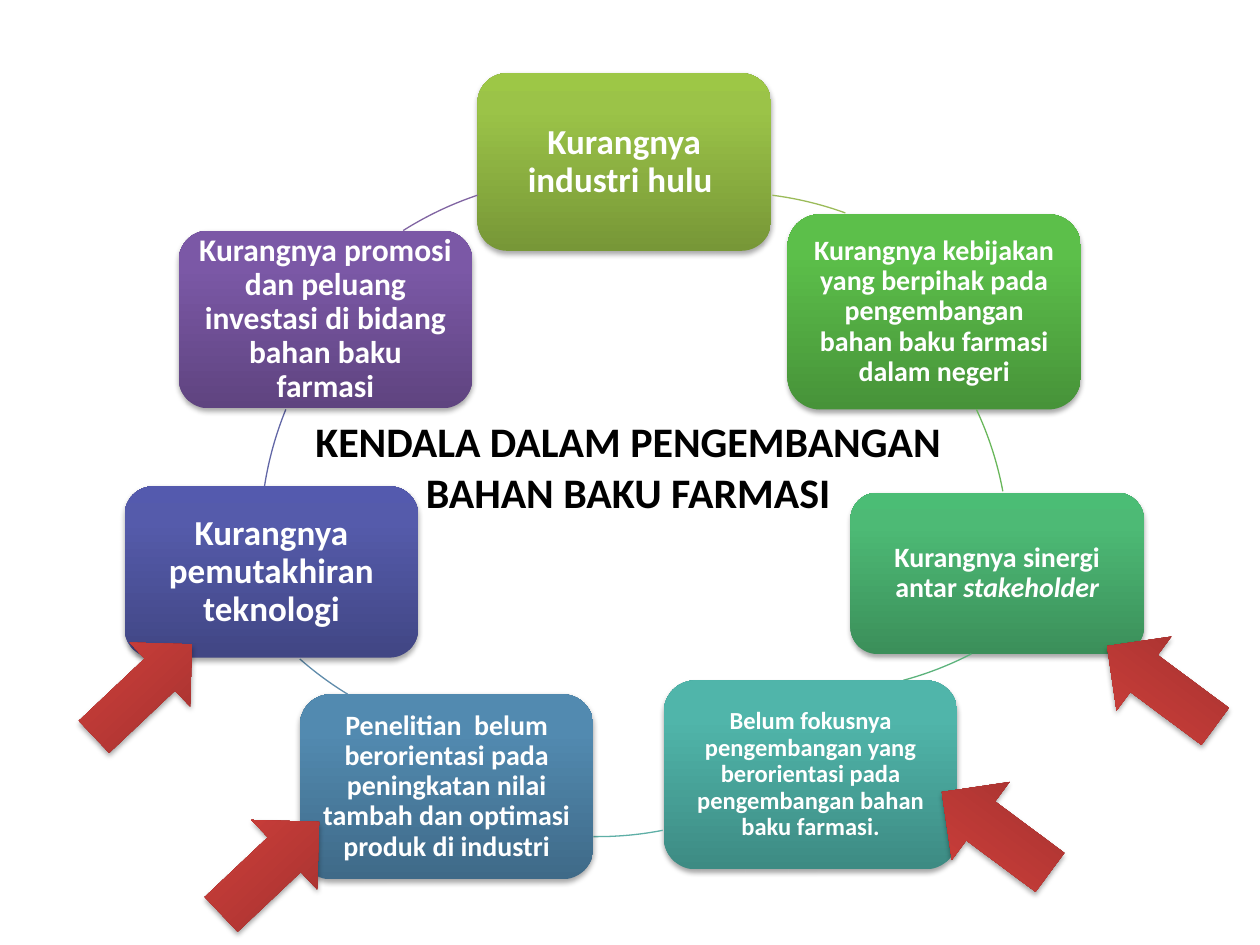
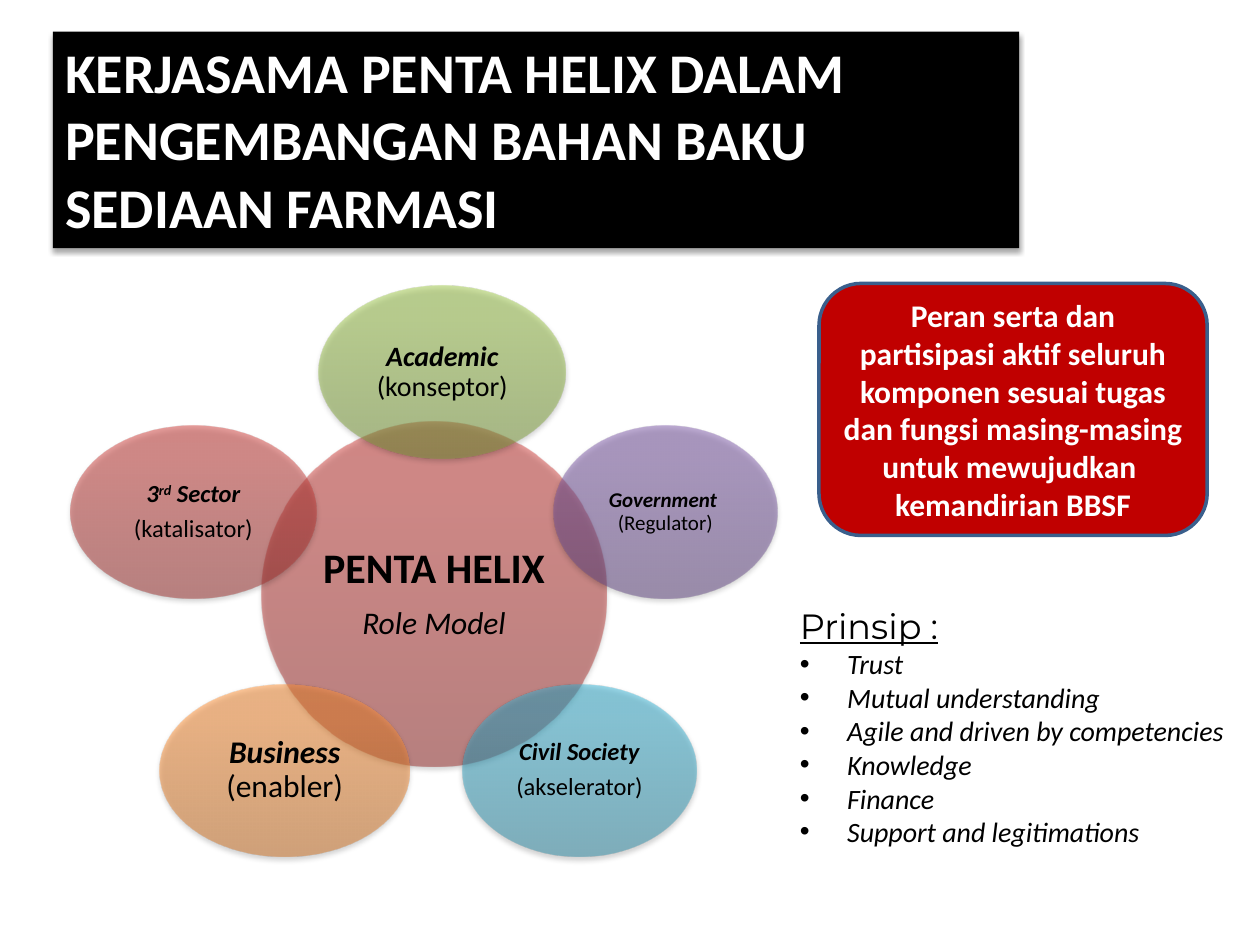
from math import atan2, degrees, hypot, sqrt

from pptx import Presentation
from pptx.dml.color import RGBColor
from pptx.enum.shapes import MSO_SHAPE
from pptx.enum.text import MSO_ANCHOR, PP_ALIGN
from pptx.oxml import parse_xml
from pptx.oxml.ns import nsdecls, qn
from pptx.util import Pt

WHITE, BLACK = "FFFFFF", "000000"
GREEN = ("779737", "9BC348", "9DC746")
LEAF = ("479339", "5CBF4A", "5BC249")
EMERALD = ("3B8F5A", "4DBA75", "4BBD75")
TEAL = ("3D8B83", "50B5AA", "4EB8AC")
STEEL = ("3F6A88", "528AB0", "518BB3")
INDIGO = ("414684", "555BAB", "545AAE")
PURPLE = ("5F4480", "7B58A6", "7C57A8")
RED = ("9C2F2D", "CB3E3A", "CE3B37")
AQUA = ("2A88A2", "37B1D2", "34B4D6")
ORANGE = ("CC6E20", "FF9034", "FF9136")

CARD_WIDTH = 167.7
RING_RADIUS = 194.4
PETAL_HEIGHT = 98.6
ARROW_LENGTH = 77

CARDS = [
    (272.9, 41.8, 101.5, GREEN, 20, "Kurangnya industri hulu "),
    (450, 122.4, 111.6, LEAF, 16,
     "Kurangnya kebijakan yang berpihak pada pengembangan bahan baku farmasi dalam negeri"),
    (486, 281.5, 92.2, EMERALD, 16,
     [("Kurangnya sinergi antar ", {}), ("stakeholder", {"italic": True})]),
    (379.4, 388.8, 108, TEAL, 14,
     "Belum fokusnya pengembangan yang berorientasi pada pengembangan bahan baku farmasi."),
    (171.4, 396.7, 105.8, STEEL, 16,
     "Penelitian  belum berorientasi pada peningkatan nilai tambah dan optimasi produk di industri"),
    (71.3, 277.9, 97.9, INDIGO, 20, "Kurangnya pemutakhiran teknologi"),
    (102.2, 131.8, 101.5, PURPLE, 18,
     "Kurangnya promosi dan peluang investasi di bidang bahan baku farmasi"),
]
ARCS = [
    ((441.4, 111.6), (483.1, 121.7), "9BBB59"),
    ((558, 234), (573.1, 280.8), "69B75B"),
    ((555.1, 373.7), (516.2, 388.8), "5CB37C"),
    ((378.7, 474.5), (339.1, 478.1), "5EAFA6"),
    ((198.7, 396.7), (171.4, 376.6), "608CAB"),
    ((151.2, 277.9), (163.4, 234), "6267A6"),
    ((230.4, 131.8), (272.9, 111.6), "8064A2"),
]
ARROWS = [
    (43.2, 369.4, 50.4, 316.6),
    (115.9, 468.7, 54.7, 316.6),
    (530.6, 447.8, 55.4, 216.6),
    (625, 365.8, 52.6, 216.6),
]
PLAIN = {"bold": False, "italic": False}
PETALS = [
    (182.2, 163.4, 141.1, GREEN, 16, [[("Academic ", {}), ("(konseptor)", PLAIN)]]),
    (316.1, 243.4, 128.2, PURPLE, 12, [[("Government  ", {}), ("(Regulator)", PLAIN)]]),
    (264.2, 391, 133.9, AQUA, 14, ["Civil Society", [("(akselerator)", PLAIN)]]),
    (91.4, 391, 142.6, ORANGE, 18, [[("Business ", {}), ("(enabler)", PLAIN)]]),
    (40.3, 243.4, 140.4, RED, 14,
     [[("3", {}), ("rd", {"raised": True}), (" Sector", {})], [("(katalisator)", PLAIN)]]),
]
PRINCIPLES = ["Trust", "Mutual understanding", "Agile and driven by competencies",
              "Knowledge", "Finance", "Support and legitimations"]


def rgb(value):
    """Turn a hex string into a colour."""
    return RGBColor.from_string(value)


def format_span(span, size=18, color=BLACK, font="Calibri", bold=False, italic=False,
                underline=False, raised=False):
    """Apply character format to one run."""
    style = span.font
    style.size, style.name = Pt(size), font
    style.bold, style.italic, style.underline = bold, italic, underline
    style.color.rgb = rgb(color)
    if raised:
        span._r.get_or_add_rPr().set("baseline", "30000")


def add_bullet(para, indent=27):
    """Give a paragraph a hanging round bullet."""
    properties = para._p.get_or_add_pPr()
    properties.set("marL", str(Pt(indent)))
    properties.set("indent", str(-Pt(indent)))
    properties.append(parse_xml(f'<a:buFont {nsdecls("a")} typeface="Arial"/>'))
    properties.append(parse_xml(f'<a:buChar {nsdecls("a")} char="•"/>'))


def write(shape, paragraphs, align=PP_ALIGN.CENTER, anchor=MSO_ANCHOR.MIDDLE, margin=None,
          wrap=True, spacing=None, after=0, bullets_from=None, **style):
    """Fill a shape with paragraphs, each a string or a list of (text, format) spans."""
    frame = shape.text_frame
    frame.word_wrap, frame.vertical_anchor = wrap, anchor
    if margin is not None:
        frame.margin_left = frame.margin_right = Pt(margin)
        frame.margin_top = frame.margin_bottom = Pt(margin)
    for index, content in enumerate(paragraphs):
        para = frame.add_paragraph() if index else frame.paragraphs[0]
        para.alignment, para.space_after = align, Pt(after)
        if spacing:
            para.line_spacing = spacing
        if bullets_from is not None and index >= bullets_from:
            add_bullet(para)
        for text, changes in [(content, {})] if isinstance(content, str) else content:
            span = para.add_run()
            span.text = text
            format_span(span, **{**style, **changes})


class Painter:
    """Draw styled elements on the current slide."""

    def __init__(self, deck):
        """Keep the deck that receives the slides."""
        self.deck = deck
        self.page = None

    def new_page(self):
        """Start a blank slide."""
        self.page = self.deck.slides.add_slide(self.deck.slide_layouts[6])

    def shape(self, kind, left, top, width, height, fill=None, line=None, weight=0.75):
        """Add a preset shape with a plain fill and line."""
        shape = self.page.shapes.add_shape(kind, Pt(left), Pt(top), Pt(width), Pt(height))
        shape.shadow.inherit = False
        if fill:
            shape.fill.solid()
            shape.fill.fore_color.rgb = rgb(fill)
        else:
            shape.fill.background()
        if line:
            shape.line.color.rgb = rgb(line)
            shape.line.width = Pt(weight)
        else:
            shape.line.fill.background()
        return shape

    def shadow(self, shape):
        """Drop a soft shadow below a shape."""
        shape._element.spPr.find(qn("a:effectLst")).append(parse_xml(
            f'<a:outerShdw {nsdecls("a")} blurRad="{Pt(3.1)}" dist="{Pt(1.8)}" dir="5400000" '
            'rotWithShape="0"><a:srgbClr val="000000"><a:alpha val="35000"/></a:srgbClr>'
            '</a:outerShdw>'))

    def glossy(self, kind, left, top, width, height, shades, opacity=100):
        """Add a shaded shape that is darkest at the bottom."""
        shape = self.shape(kind, left, top, width, height)
        stops = "".join(
            f'<a:gs pos="{place}000"><a:srgbClr val="{shade}"><a:alpha val="{opacity}000"/>'
            '</a:srgbClr></a:gs>' for place, shade in zip((0, 80, 100), shades))
        properties = shape._element.spPr
        properties.replace(properties.find(qn("a:noFill")), parse_xml(
            f'<a:gradFill {nsdecls("a")} rotWithShape="1"><a:gsLst>{stops}</a:gsLst>'
            '<a:lin ang="16200000" scaled="0"/></a:gradFill>'))
        self.shadow(shape)
        return shape

    def arc(self, start, end, color):
        """Draw a clockwise piece of the ring between two points."""
        (x1, y1), (x2, y2) = start, end
        chord = hypot(x2 - x1, y2 - y1)
        reach = sqrt(RING_RADIUS ** 2 - chord ** 2 / 4) / chord
        center_x = (x1 + x2) / 2 - (y2 - y1) * reach
        center_y = (y1 + y2) / 2 + (x2 - x1) * reach
        arc = self.shape(MSO_SHAPE.ARC, center_x - RING_RADIUS, center_y - RING_RADIUS,
                         2 * RING_RADIUS, 2 * RING_RADIUS, line=color)
        for index, (x, y) in enumerate((start, end)):
            arc.adjustments[index] = degrees(atan2(y - center_y, x - center_x)) % 360 * 0.6

    def text(self, left, top, width, height, paragraphs, **style):
        """Add a text box."""
        box = self.page.shapes.add_textbox(Pt(left), Pt(top), Pt(width), Pt(height))
        write(box, paragraphs, **style)

    def card(self, left, top, height, shades, size, content):
        """Add one obstacle card of the ring."""
        card = self.glossy(MSO_SHAPE.ROUNDED_RECTANGLE, left, top, CARD_WIDTH, height, shades)
        write(card, [content], size=size, color=WHITE, bold=True, spacing=0.9,
              after=0.35 * size, margin=0.32 * size)

    def petal(self, left, top, width, height, shades, size, paragraphs, italic=True):
        """Add one translucent ellipse with its text in the inscribed rectangle."""
        self.glossy(MSO_SHAPE.OVAL, left, top, width, height, shades, opacity=50)
        inset = (1 - sqrt(0.5)) / 2
        self.text(left + inset * width, top + inset * height, width * sqrt(0.5),
                  height * sqrt(0.5), paragraphs, size=size, bold=True, italic=italic,
                  spacing=0.9, after=0.35 * size, margin=0.1 * size)


def draw_obstacles(painter):
    """Draw the ring of obstacles."""
    painter.new_page()
    for card, arc in zip(CARDS, ARCS):
        painter.card(*card)
        painter.arc(*arc)
    painter.text(171.4, 234, 375.1, 65.5, ["KENDALA DALAM PENGEMBANGAN", "BAHAN BAKU FARMASI"],
                 anchor=MSO_ANCHOR.TOP, wrap=False, size=24, bold=True)
    for left, top, height, turn in ARROWS:
        arrow = painter.glossy(MSO_SHAPE.RIGHT_ARROW, left, top, ARROW_LENGTH, height, RED)
        arrow.rotation = turn


def draw_helix(painter):
    """Draw the five partners, their role and their principles."""
    painter.new_page()
    painter.petal(149.8, 241.2, 196.6, 196.6, RED, 24,
                  ["PENTA HELIX", [("Role Model", {"size": 18, "bold": False, "italic": True})]],
                  italic=False)
    for left, top, width, shades, size, paragraphs in PETALS:
        painter.petal(left, top, width, PETAL_HEIGHT, shades, size, paragraphs)
    title = painter.shape(MSO_SHAPE.RECTANGLE, 30.2, 18, 552.2, 123.8, fill=BLACK)
    painter.shadow(title)
    write(title, ["KERJASAMA PENTA HELIX DALAM PENGEMBANGAN BAHAN BAKU", "SEDIAAN FARMASI"],
          align=PP_ALIGN.LEFT, anchor=MSO_ANCHOR.TOP, size=32, color=WHITE, bold=True)
    heading = {"size": 20, "font": "Montserrat", "italic": False, "underline": True}
    painter.text(450, 342, 259.9, 186.5, [[("Prinsip :", heading)], *PRINCIPLES],
                 align=PP_ALIGN.LEFT, anchor=MSO_ANCHOR.TOP, wrap=False, bullets_from=1,
                 size=16, italic=True)
    role = painter.shape(MSO_SHAPE.ROUNDED_RECTANGLE, 468, 162, 221.8, 144,
                         fill="C00000", line="3A5F8C", weight=2)
    write(role, ["Peran serta dan partisipasi aktif seluruh komponen sesuai tugas dan fungsi "
                 "masing-masing untuk mewujudkan  kemandirian BBSF"],
          margin=5, size=18, color=WHITE, bold=True)


def main():
    """Build and save the deck."""
    deck = Presentation()
    deck.slide_width, deck.slide_height = Pt(720), Pt(540)
    painter = Painter(deck)
    draw_obstacles(painter)
    draw_helix(painter)
    deck.save("out.pptx")


if __name__ == "__main__":
    main()
